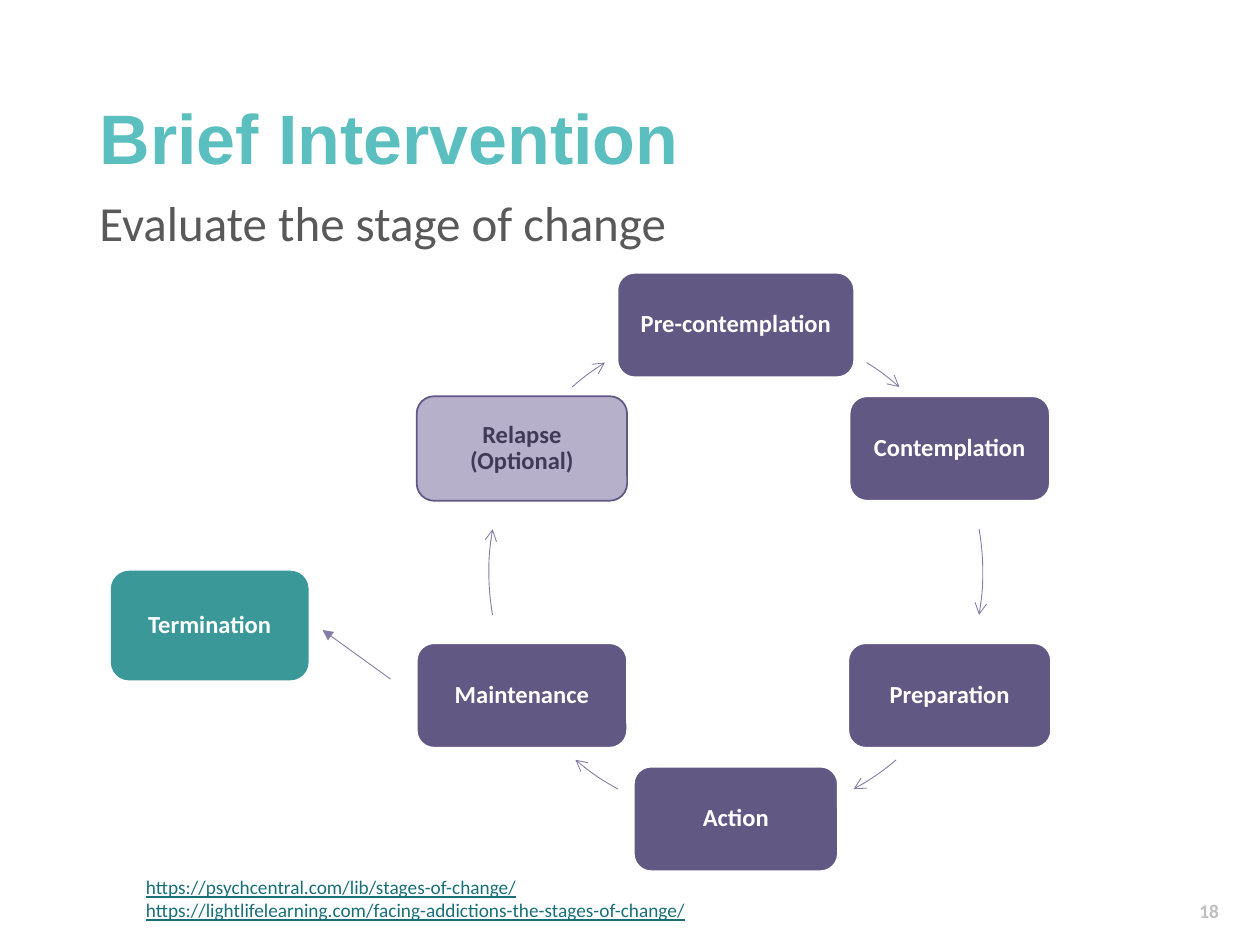
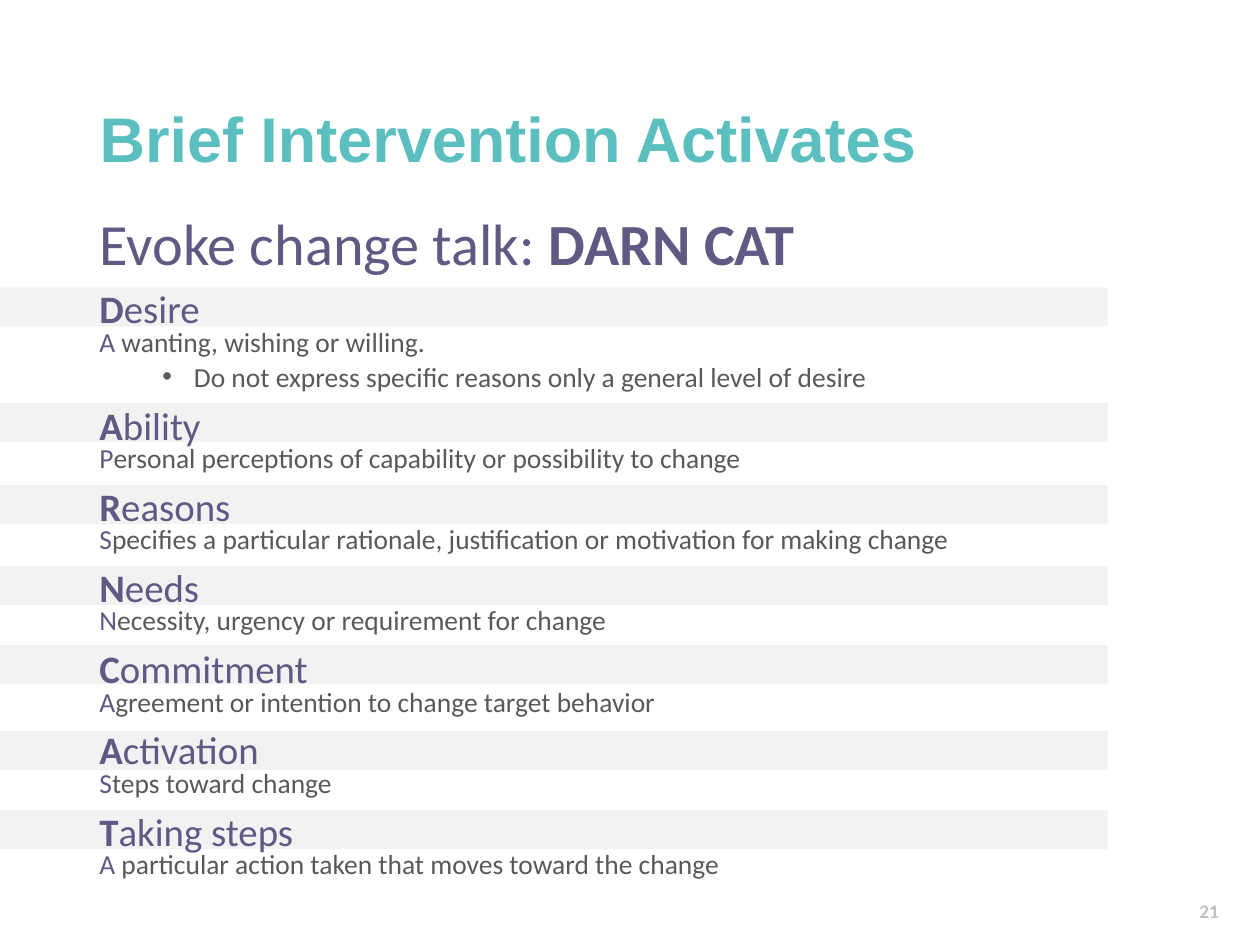
from math import cos, radians, sin

from lxml.etree import SubElement
from pptx import Presentation
from pptx.dml.color import RGBColor
from pptx.enum.shapes import MSO_CONNECTOR, MSO_SHAPE
from pptx.enum.text import MSO_ANCHOR, MSO_AUTO_SIZE, PP_ALIGN
from pptx.oxml.ns import qn
from pptx.util import Inches, Pt

TEAL = RGBColor(0x5B, 0xBF, 0xBF)
DARK_TEAL = RGBColor(0x3B, 0x98, 0x98)
LINK = RGBColor(0x18, 0x6F, 0x77)
PURPLE = RGBColor(0x61, 0x58, 0x83)
DARK_PURPLE = RGBColor(0x40, 0x3A, 0x57)
LILAC = RGBColor(0xB6, 0xB0, 0xCA)
ARROW = RGBColor(0x85, 0x7C, 0xA7)
GRAY = RGBColor(0x59, 0x59, 0x59)
NUMBER_GRAY = RGBColor(0xBF, 0xBF, 0xBF)
BAND_GRAY = RGBColor(0xF2, 0xF2, 0xF2)
WHITE = RGBColor(0xFF, 0xFF, 0xFF)

BODY_FONT = "Calibri"
TITLE_FONT = "Arial"
CONTENT_LEFT, CONTENT_WIDTH = 0.69, 8.62
ANGLE_UNITS = 60000

STAGES = [
    ("Pre-contemplation", 1.88),
    ("Contemplation", 1.59),
    ("Preparation", 1.61),
    ("Action", 1.62),
    ("Maintenance", 1.67),
    ("Relapse\v(Optional)", 1.67),
]
ARROW_ANGLES = [(-58, -48.5), (-10, 10), (49.5, 61.5), (118.5, 130.5), (170, 190), (228.5, 238)]
LINKS = [
    "https://psychcentral.com/lib/stages-of-change/",
    "https://lightlifelearning.com/facing-addictions-the-stages-of-change/",
]
CHANGE_TALK = [
    (2.28, "Desire", "A wanting, wishing or willing.",
     "Do not express specific reasons only a general level of desire"),
    (3.2, "Ability", "Personal perceptions of capability or possibility to change", None),
    (3.85, "Reasons",
     "Specifies a particular rationale, justification or motivation for making change", None),
    (4.49, "Needs", "Necessity, urgency or requirement for change", None),
    (5.12, "Commitment", "Agreement or intention to change target behavior", None),
    (5.8, "Activation", "Steps toward change", None),
    (6.43, "Taking steps", "A particular action taken that moves toward the change", None),
]


def format_font(font, size, color, bold=False, name=BODY_FONT):
    font.name = name
    font.size = Pt(size)
    font.bold = bold
    font.color.rgb = color


def add_run(paragraph, text, size, color, bold=False):
    run = paragraph.add_run()
    run.text = text
    format_font(run.font, size, color, bold)


def add_text_frame(slide, left, top, width, height):
    box = slide.shapes.add_textbox(Inches(left), Inches(top), Inches(width), Inches(height))
    box.text_frame.word_wrap = True
    return box.text_frame


def add_box(slide, kind, left, top, width, height, fill, line=None):
    shape = slide.shapes.add_shape(kind, Inches(left), Inches(top), Inches(width), Inches(height))
    shape.shadow.inherit = False
    shape.fill.solid()
    shape.fill.fore_color.rgb = fill
    if line is None:
        shape.line.fill.background()
    else:
        shape.line.color.rgb = line
        shape.line.width = Pt(1)
    return shape


def add_node(slide, text, left, top, width, height, fill, line=None, color=WHITE):
    node = add_box(slide, MSO_SHAPE.ROUNDED_RECTANGLE, left, top, width, height, fill, line)
    frame = node.text_frame
    frame.word_wrap = True
    frame.vertical_anchor = MSO_ANCHOR.MIDDLE
    frame.text = text
    paragraph = frame.paragraphs[0]
    paragraph.alignment = PP_ALIGN.CENTER
    paragraph.line_spacing = 0.9
    for run in paragraph.runs:
        format_font(run.font, 14, color, True)


def style_arrow(shape, head):
    shape.line.color.rgb = ARROW
    shape.line.width = Pt(0.5)
    SubElement(shape.line._get_or_add_ln(), qn("a:tailEnd"), type=head)


def add_arc_arrow(slide, left, top, diameter, start, end):
    right, bottom = Inches(left + diameter), Inches(top + diameter)
    builder = slide.shapes.build_freeform(Inches(left), Inches(top))
    builder.add_line_segments([(right, bottom)], close=False)
    arc = builder.convert_to_shape()
    arc.shadow.inherit = False
    arc.fill.background()
    style_arrow(arc, "arrow")

    outline = next(arc._element.iter(qn("a:path")))
    for segment in list(outline):
        outline.remove(segment)
    radius = Inches(diameter / 2)
    angle = radians(start)
    move = SubElement(outline, qn("a:moveTo"))
    SubElement(move, qn("a:pt"), x=str(round(radius * (1 + cos(angle)))),
               y=str(round(radius * (1 + sin(angle)))))
    SubElement(outline, qn("a:arcTo"), wR=str(radius), hR=str(radius),
               stAng=str(round(start % 360 * ANGLE_UNITS)),
               swAng=str(round((end - start) * ANGLE_UNITS)))


def add_straight_arrow(slide, start_x, start_y, end_x, end_y):
    arrow = slide.shapes.add_connector(
        MSO_CONNECTOR.STRAIGHT, Inches(start_x), Inches(start_y), Inches(end_x), Inches(end_y))
    style_arrow(arrow, "triangle")
    SubElement(arrow._element.spPr, qn("a:effectLst"))


def add_titled_slide(presentation, title_text, title_size, number):
    slide = presentation.slides.add_slide(presentation.slide_layouts[5])
    title = slide.shapes.title
    title.left, title.top = Inches(CONTENT_LEFT), Inches(0.4)
    title.width, title.height = Inches(CONTENT_WIDTH), Inches(1.45)
    frame = title.text_frame
    frame.text = title_text
    frame.auto_size = MSO_AUTO_SIZE.NONE
    frame.vertical_anchor = MSO_ANCHOR.MIDDLE
    paragraph = frame.paragraphs[0]
    paragraph.alignment = PP_ALIGN.LEFT
    paragraph.line_spacing = 0.9
    format_font(paragraph.runs[0].font, title_size, TEAL, True, TITLE_FONT)

    number_paragraph = add_text_frame(slide, 9.42, 7.13, 0.65, 0.25).paragraphs[0]
    number_paragraph.line_spacing = 0.75
    add_run(number_paragraph, number, 11, NUMBER_GRAY, True)
    return slide


def add_stage_cycle(slide, left, top, diameter, node_height=0.83):
    radius = diameter / 2
    center_x, center_y = left + radius, top + radius
    for index, ((name, width), (start, end)) in enumerate(zip(STAGES, ARROW_ANGLES)):
        angle = radians(-90 + index * 360 / len(STAGES))
        optional = index == len(STAGES) - 1
        add_node(
            slide, name,
            center_x + radius * cos(angle) - width / 2,
            center_y + radius * sin(angle) - node_height / 2,
            width, node_height,
            fill=LILAC if optional else PURPLE,
            line=PURPLE if optional else WHITE,
            color=DARK_PURPLE if optional else WHITE)
        add_arc_arrow(slide, left, top, diameter, start, end)


def add_links(slide, left, top, width, height):
    frame = add_text_frame(slide, left, top, width, height)
    frame.text = "\n".join(LINKS)
    for paragraph in frame.paragraphs:
        font = paragraph.runs[0].font
        format_font(font, 11, LINK)
        font.underline = True


def build_stages_slide(presentation):
    slide = add_titled_slide(presentation, "Brief Intervention", 40, "18")
    subtitle = add_text_frame(slide, CONTENT_LEFT, 1.53, CONTENT_WIDTH, 4.76).paragraphs[0]
    subtitle.line_spacing = 0.9
    add_run(subtitle, "Evaluate the stage of change", 28, GRAY)
    add_links(slide, 1.06, 6.9, 8.02, 0.66)
    add_stage_cycle(slide, 3.88, 2.58, 3.92)
    add_straight_arrow(slide, 3.1, 5.39, 2.56, 5)
    add_node(slide, "Termination", 0.88, 4.53, 1.57, 0.87, DARK_TEAL)


def add_spaced_paragraph(frame, space_before):
    paragraph = frame.add_paragraph()
    paragraph.line_spacing = 0.8
    paragraph.space_before = Pt(space_before)
    return paragraph


def add_bullet(frame, text):
    paragraph = add_spaced_paragraph(frame, 5)
    properties = paragraph._p.get_or_add_pPr()
    properties.set("marL", str(Inches(0.75)))
    properties.set("indent", str(Inches(-0.25)))
    SubElement(properties, qn("a:buFont"), typeface="Arial")
    SubElement(properties, qn("a:buChar"), char="•")
    add_run(paragraph, text, 15.7, GRAY)


def add_change_talk(slide, left, top, width, height):
    frame = add_text_frame(slide, left, top, width, height)
    heading = frame.paragraphs[0]
    heading.line_spacing = 0.8
    add_run(heading, "Evoke change talk: ", 33.3, PURPLE)
    add_run(heading, "DARN CAT", 33.3, PURPLE, True)
    for _, term, meaning, detail in CHANGE_TALK:
        paragraph = add_spaced_paragraph(frame, 10)
        add_run(paragraph, term[0], 22.2, PURPLE, True)
        add_run(paragraph, term[1:], 22.2, PURPLE)
        paragraph.add_line_break()
        add_run(paragraph, meaning[0], 15.7, PURPLE)
        add_run(paragraph, meaning[1:], 15.7, GRAY)
        if detail:
            add_bullet(frame, detail)


def build_change_talk_slide(presentation):
    slide = add_titled_slide(presentation, "Brief Intervention Activates", 36, "21")
    for band_top, *_ in CHANGE_TALK:
        add_box(slide, MSO_SHAPE.RECTANGLE, 0, band_top, 8.79, 0.31, BAND_GRAY)
    add_change_talk(slide, CONTENT_LEFT, 1.7, CONTENT_WIDTH, 5.64)


def main():
    presentation = Presentation()
    presentation.slide_width = Inches(10)
    presentation.slide_height = Inches(7.5)
    build_stages_slide(presentation)
    build_change_talk_slide(presentation)
    presentation.save("out.pptx")


if __name__ == "__main__":
    main()
